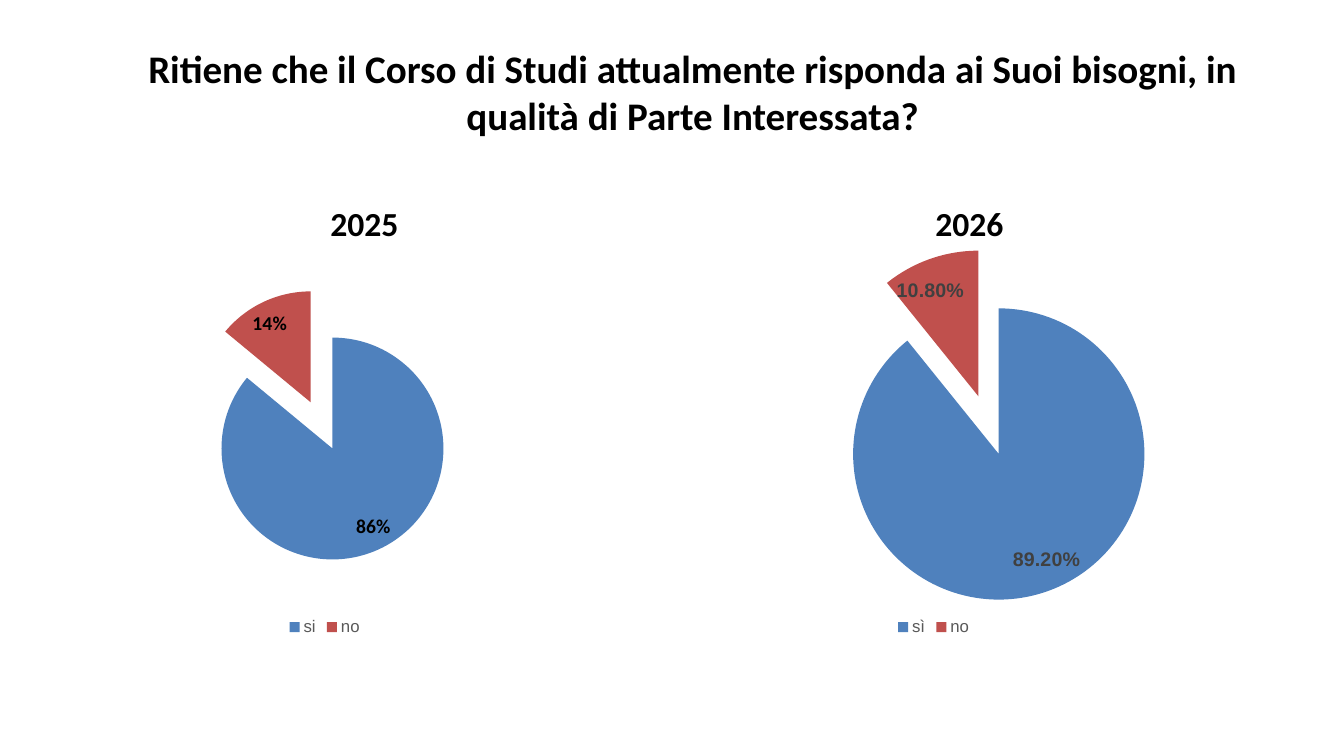
from lxml import etree
from pptx import Presentation
from pptx.chart.data import CategoryChartData
from pptx.dml.color import RGBColor
from pptx.enum.chart import XL_CHART_TYPE, XL_LABEL_POSITION, XL_LEGEND_POSITION
from pptx.enum.text import MSO_ANCHOR, PP_ALIGN
from pptx.oxml.ns import qn
from pptx.util import Inches, Pt

PIE = XL_CHART_TYPE.PIE
BEST_FIT = XL_LABEL_POSITION.BEST_FIT
BOTTOM_LEGEND = XL_LEGEND_POSITION.BOTTOM
TOP, BOTTOM = MSO_ANCHOR.TOP, MSO_ANCHOR.BOTTOM
CENTER = PP_ALIGN.CENTER

BLACK = RGBColor(0x00, 0x00, 0x00)
DARK_GREY = RGBColor(0x40, 0x40, 0x40)
GREY = RGBColor(0x59, 0x59, 0x59)
BLUE = RGBColor(0x4F, 0x81, 0xBD)
RED = RGBColor(0xC0, 0x50, 0x4D)

TITLE = ("Ritiene che il Corso di Studi attualmente risponda ai Suoi bisogni, "
         "in qualità di Parte Interessata?")
TITLE_BOX = (0.92, 0.44, 11.9, 1.25)
YEARS = [
    dict(year="2025", placeholder=1, heading=(0.67, 2.01, 5.89, 0.4),
         box=(0.22, 2.48, 6, 3.87), plot=(0.09, 0.1, 0.81, 0.7),
         cats=["si", "no"], vals=[86, 14], explosion=23,
         percent=True, fmt="0%", font="Calibri", color=BLACK),
    dict(year="2026", placeholder=3, heading=(6.67, 2.01, 5.89, 0.4),
         box=(5.85, 1.56, 6.82, 4.79), plot=(0.18, 0.19, 0.8, 0.73),
         cats=["sì", "no"], vals=[0.892, 0.108], explosion=21,
         percent=False, fmt="0.00%", font="Arial", color=DARK_GREY),
]


def style(font, name="Arial", size=12, color=BLACK, bold=False):
    """Format a font."""
    font.name, font.size, font.bold = name, Pt(size), bold
    font.color.rgb = color


def put_text(sp, text, box, size, anchor):
    """Place a placeholder and fill it with one bold centred paragraph."""
    sp.left, sp.top, sp.width, sp.height = map(Inches, box)
    tf = sp.text_frame
    tf.word_wrap = True
    tf.vertical_anchor = anchor
    tf.margin_left = tf.margin_top = tf.margin_right = tf.margin_bottom = 0
    p = tf.paragraphs[0]
    p.alignment = CENTER
    p.space_before = Pt(0)
    p.line_spacing = 1.0
    r = p.add_run()
    r.text = text
    style(r.font, "Calibri", size, bold=True)


def set_plot_layout(chart, plot):
    """Fix the inner plot area as fractions of the chart."""
    area = chart.element.find(".//" + qn("c:plotArea"))
    for old in area.findall(qn("c:layout")):
        area.remove(old)
    layout = etree.Element(qn("c:layout"))
    manual = etree.SubElement(layout, qn("c:manualLayout"))
    settings = [("layoutTarget", "inner"), ("xMode", "edge"), ("yMode", "edge")]
    for tag, val in settings + list(zip("xywh", plot)):
        etree.SubElement(manual, qn("c:" + tag)).set("val", str(val))
    area.insert(0, layout)


def add_pie(slide, year):
    """Add the exploded pie of one year."""
    data = CategoryChartData()
    data.categories = year["cats"]
    data.add_series("Series 1", year["vals"])
    chart = slide.shapes.add_chart(PIE, *map(Inches, year["box"]), data).chart
    style(chart.font, size=10)
    chart.has_title = False
    chart.has_legend = True
    chart.legend.position = BOTTOM_LEGEND
    chart.legend.include_in_layout = False
    style(chart.legend.font, color=GREY)
    chart.plots[0].vary_by_categories = True
    series = chart.plots[0].series[0]
    for i, color in enumerate((BLUE, RED)):
        fill = series.points[i].format.fill
        fill.solid()
        fill.fore_color.rgb = color
    explosion = etree.Element(qn("c:explosion"))
    explosion.set("val", str(year["explosion"]))
    series.points[0].format.fill
    chart.element.find(".//" + qn("c:dPt")).addprevious(explosion)
    labels = series.data_labels
    labels.show_percentage = year["percent"]
    labels.show_value = not year["percent"]
    labels.number_format = year["fmt"]
    labels.number_format_is_linked = False
    labels.position = BEST_FIT
    style(labels.font, year["font"], 14, year["color"], True)
    set_plot_layout(chart, year["plot"])


def main():
    """Build the slide."""
    prs = Presentation()
    prs.slide_width, prs.slide_height = Inches(13.33), Inches(7.5)
    s = prs.slides.add_slide(prs.slide_layouts[4])
    put_text(s.shapes.title, TITLE, TITLE_BOX, 27.9, TOP)
    for year in YEARS:
        heading = s.placeholders[year["placeholder"]]
        put_text(heading, year["year"], year["heading"], 24, BOTTOM)
        add_pie(s, year)
    for sp in list(s.placeholders):
        if not sp.text_frame.text:
            sp.element.getparent().remove(sp.element)
    prs.save("out.pptx")


if __name__ == "__main__":
    main()
